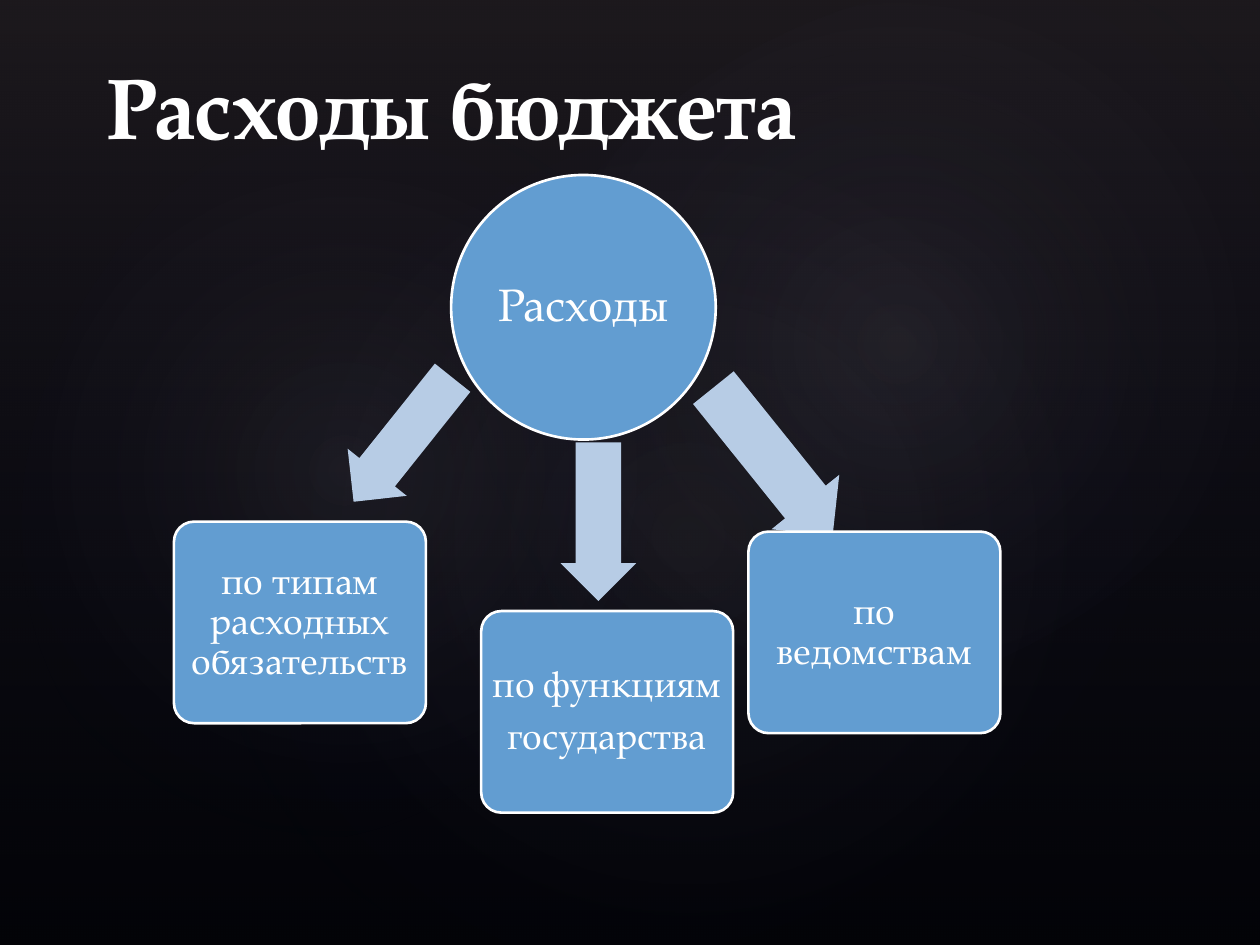
import lxml.etree
import pptx
import pptx.dml.color
import pptx.enum.shapes
import pptx.enum.text
import pptx.oxml
import pptx.oxml.ns
import pptx.util

Pt = pptx.util.Pt
ShapeKind = pptx.enum.shapes.MSO_SHAPE
Align = pptx.enum.text.PP_ALIGN
Anchor = pptx.enum.text.MSO_ANCHOR


def color(value):
    return pptx.dml.color.RGBColor.from_string(value)


def write_text(shape, lines, size, font, fill, bold=False, align=Align.CENTER,
               anchor=Anchor.MIDDLE, inset=None, line_spacing=None, space_after=0):
    frame = shape.text_frame
    frame.word_wrap = True
    frame.auto_size = pptx.enum.text.MSO_AUTO_SIZE.NONE
    frame.vertical_anchor = anchor
    if inset is not None:
        frame.margin_left = frame.margin_right = Pt(inset)
        frame.margin_top = frame.margin_bottom = Pt(inset)
    for index, line in enumerate(lines):
        paragraph = frame.add_paragraph() if index else frame.paragraphs[0]
        paragraph.alignment = align
        paragraph.space_after = Pt(space_after)
        if line_spacing:
            paragraph.line_spacing = line_spacing
        run = paragraph.add_run()
        run.text = line
        run.font.size = Pt(size)
        run.font.name = font
        run.font.bold = bold
        run.font.color.rgb = color(fill)


class SlideBuilder:
    font = "TeX Gyre Pagella"
    white = "FFFFFF"
    node_fill = "629DD1"
    arrow_fill = "B7CCE5"

    def __init__(self, slide, background):
        self.slide = slide
        slide.background.fill.solid()
        slide.background.fill.fore_color.rgb = color(background)

    def shape(self, kind, left, top, width, height, rotation=0):
        shape = self.slide.shapes.add_shape(kind, Pt(left), Pt(top), Pt(width), Pt(height))
        shape.shadow.inherit = False
        shape.rotation = rotation
        shape.line.fill.background()
        return shape

    def glow(self, kind, box, stops, direction, rotation=0):
        shape = self.shape(kind, *box, rotation)
        shape.fill.background()
        stop_xml = "".join(
            f'<a:gs pos="{position * 1000}"><a:srgbClr val="{value}">'
            f'<a:alpha val="{alpha * 1000}"/></a:srgbClr></a:gs>'
            for position, value, alpha in stops)
        gradient = pptx.oxml.parse_xml(
            f'<a:gradFill {pptx.oxml.ns.nsdecls("a")} rotWithShape="1">'
            f'<a:gsLst>{stop_xml}</a:gsLst>{direction}</a:gradFill>')
        properties = shape.element.spPr
        properties.replace(properties.find(pptx.oxml.ns.qn("a:noFill")), gradient)

    def title(self, text, left, top, width, height):
        title = self.slide.shapes.title
        title.left, title.top, title.width, title.height = map(Pt, (left, top, width, height))
        write_text(title, [text], 49, self.font, self.white, bold=True,
                   align=Align.LEFT, anchor=Anchor.BOTTOM)
        self.slide.shapes.element.append(title.element)

    def node(self, kind, lines, left, top, width, height, size, inset):
        node = self.shape(kind, left, top, width, height)
        if kind == ShapeKind.ROUNDED_RECTANGLE:
            node.adjustments[0] = 0.1
        node.fill.solid()
        node.fill.fore_color.rgb = color(self.node_fill)
        node.line.color.rgb = color(self.white)
        node.line.width = Pt(1.5)
        write_text(node, lines, size, self.font, self.white, inset=inset,
                   line_spacing=0.9, space_after=0.35 * size)

    def arrow(self, left, top, width, height, rotation):
        arrow = self.shape(ShapeKind.LEFT_ARROW, left, top, width, height, rotation)
        arrow.adjustments[0] = 0.6
        arrow.adjustments[1] = 0.5
        arrow.fill.solid()
        arrow.fill.fore_color.rgb = color(self.arrow_fill)


def main():
    presentation = pptx.Presentation()
    presentation.slide_width = Pt(720)
    presentation.slide_height = Pt(540)
    slide = presentation.slides.add_slide(presentation.slide_layouts[5])
    builder = SlideBuilder(slide, "000000")

    builder.glow(ShapeKind.RECTANGLE, (0, 0, 720, 540),
                 [(0, "504652", 36), (100, "242852", 10)],
                 '<a:lin ang="5400000" scaled="0"/>')
    radial = ('<a:path path="circle">'
              '<a:fillToRect l="50000" t="50000" r="50000" b="50000"/></a:path>')
    for box, rotation, alpha in [
        ((108, 82, 570, 449), 328.7, 7),
        ((-21.6, 92, 436, 353), 294.3, 8),
        ((257.8, 9.4, 510.5, 374.4), 328.7, 8),
    ]:
        builder.glow(ShapeKind.OVAL, box, [(0, "C4BCC6", alpha), (58, "242852", 0)],
                     radial, rotation)

    builder.title("Расходы бюджета", 54, 21, 594, 72)
    builder.node(ShapeKind.OVAL, ["Расходы"], 257.8, 100, 151.2, 151.2, 26, 1.5)

    branches = [
        ((185, 229.7, 90.7, 43.2, 308.6), (99.4, 298.1),
         ["по типам расходных обязательств"]),
        ((296.6, 276.5, 90.7, 43.2, 270), (275, 349.2), ["по функциям", "государства"]),
        ((387.4, 239, 108.7, 49.7, 231.2), (427.7, 303.8), ["по ведомствам"]),
    ]
    for arrow, corner, lines in branches:
        builder.arrow(*arrow)
        builder.node(ShapeKind.ROUNDED_RECTANGLE, lines, *corner, 144, 115.2, 21, 3)

    presentation.save("out.pptx")


if __name__ == "__main__":
    main()
